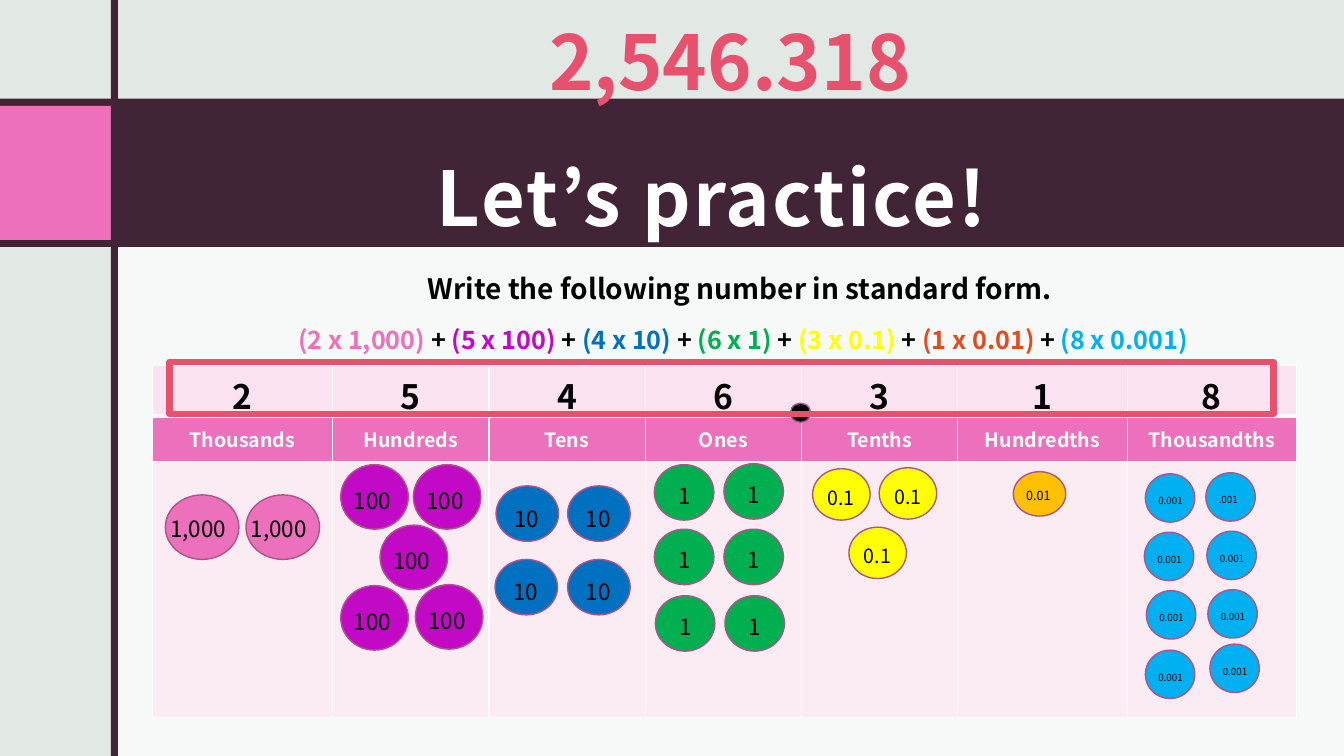
from dataclasses import dataclass

import lxml.etree
import pptx
import pptx.dml.color
import pptx.enum.shapes
import pptx.enum.text
import pptx.oxml.ns
import pptx.util

Inches = pptx.util.Inches
Pt = pptx.util.Pt
SHAPE = pptx.enum.shapes.MSO_SHAPE
ALIGN = pptx.enum.text.PP_ALIGN
ANCHOR = pptx.enum.text.MSO_ANCHOR
FIT = pptx.enum.text.MSO_AUTO_SIZE
qn = pptx.oxml.ns.qn


@dataclass(frozen=True)
class Theme:
    font: str = "Noto Sans CJK JP"
    backdrop: str = "E2E8E4"
    plum: str = "412436"
    pink: str = "EC70BB"
    coral: str = "E8516D"
    rim: str = "AF538A"
    digit_row: str = "FBE2F1"
    counter_row: str = "FBEBF3"
    white: str = "FFFFFF"
    black: str = "000000"
    purple: str = "C20AC6"
    blue: str = "0070C0"
    green: str = "00B050"
    yellow: str = "FFFF00"
    amber: str = "FFC000"
    orange: str = "E14C1F"
    sky: str = "00B0F0"
    headline: int = 54
    digit: int = 24
    task: int = 20
    sum: int = 18
    place: int = 14


def rgb(color):
    return pptx.dml.color.RGBColor.from_string(color)


class PracticeSlide:
    def __init__(self, deck, theme):
        self.theme = theme
        self.slide = deck.slides.add_slide(deck.slide_layouts[5])
        self.shapes = self.slide.shapes
        fill = self.slide.background.fill
        fill.solid()
        fill.fore_color.rgb = rgb(theme.backdrop)

    def style(self, font, size, color, bold=False):
        font.name, font.size, font.bold = self.theme.font, Pt(size), bold
        font.color.rgb = rgb(color)

    def shape(self, kind, box, fill=None, line=None, line_width=1, opacity=None, parent=None):
        shape = (parent or self.shapes).add_shape(kind, *map(Inches, box))
        shape.shadow.inherit = False
        if fill:
            shape.fill.solid()
            shape.fill.fore_color.rgb = rgb(fill)
        else:
            shape.fill.background()
        if line:
            shape.line.color.rgb = rgb(line)
            shape.line.width = Pt(line_width)
        else:
            shape.line.fill.background()
        if opacity:
            color = next(shape.element.spPr.iter(qn("a:srgbClr")))
            lxml.etree.SubElement(color, qn("a:alpha"), val=str(opacity * 1000))

    def text(self, box, words, size, color, bold=False, align=ALIGN.LEFT, parent=None):
        frame = (parent or self.shapes).add_textbox(*map(Inches, box)).text_frame
        frame.word_wrap = True
        frame.auto_size = FIT.SHAPE_TO_FIT_TEXT
        line = frame.paragraphs[0]
        line.text, line.alignment = words, align
        self.style(line.font, size, color, bold)
        return frame

    def title(self, box, words):
        title = self.shapes.title
        self.shapes.element.append(title.element)  # bring above the band
        title.left, title.top, title.width, title.height = map(Inches, box)
        frame = title.text_frame
        frame.auto_size, frame.word_wrap = FIT.NONE, True
        frame.vertical_anchor = ANCHOR.MIDDLE
        frame.margin_left = frame.margin_right = frame.margin_top = Inches(0.12)
        frame.margin_bottom = Inches(0.1)
        line = frame.paragraphs[0]
        line.text, line.alignment, line.line_spacing = words, ALIGN.CENTER, 1.5
        self.style(line.font, self.theme.headline, self.theme.white, True)
        line.runs[0].font._element.set("spc", "150")

    def cell(self, cell, words, size, color, fill, bottom):
        properties = cell._tc.get_or_add_tcPr()
        for side, width in (("L", 1), ("R", 1), ("T", 1), ("B", bottom)):
            border = lxml.etree.SubElement(properties, qn("a:ln" + side), w=str(Pt(width)))
            solid = lxml.etree.SubElement(border, qn("a:solidFill"))
            lxml.etree.SubElement(solid, qn("a:srgbClr"), val=self.theme.white)
        cell.fill.solid()
        cell.fill.fore_color.rgb = rgb(fill)
        cell.vertical_anchor = ANCHOR.MIDDLE
        line = cell.text_frame.paragraphs[0]
        line.text, line.alignment = words, ALIGN.CENTER
        self.style(line.font, size, color, True)

    def table(self, box, widths, rows):
        table = self.shapes.add_table(len(rows), len(widths), *map(Inches, box)).table
        for column, width in zip(table.columns, widths):
            column.width = Inches(width)
        for row, (height, words, *look) in zip(table.rows, rows):
            row.height = Inches(height)
            for cell, word in zip(row.cells, words):
                self.cell(cell, word, *look)

    def counter(self, left, top, size, color, label, label_size, offset, label_box):
        group = self.shapes.add_group_shape().shapes
        self.shape(SHAPE.OVAL, (left, top, *size), color, self.theme.rim, parent=group)
        box = (left + offset[0], top + offset[1], *label_box)
        self.text(box, label, label_size, self.theme.black, parent=group)


def main():
    theme = Theme()
    deck = pptx.Presentation()
    deck.slide_width, deck.slide_height = Inches(13.33), Inches(7.5)
    page = PracticeSlide(deck, theme)

    # Backdrop panels and title band
    page.shape(SHAPE.RECTANGLE, (1.14, 2.33, 12.2, 5.17), theme.white, opacity=75)
    page.shape(SHAPE.RECTANGLE, (0, 0.98, 13.33, 1.47), theme.plum)
    page.title((1.68, 0.98, 10.95, 1.47), "Let’s practice! ")
    page.shape(SHAPE.RECTANGLE, (0, 1.05, 1.1, 1.33), theme.pink)
    page.shape(SHAPE.RECTANGLE, (1.1, 0, 0.07, 7.5), theme.plum)

    # Task and expanded form
    task = page.text((1.51, 2.64, 11.72, 0.94), "Write the following number in standard form. ",
                     theme.task, theme.black, True, ALIGN.CENTER)
    expanded = task.add_paragraph()
    expanded.alignment, expanded.space_before = ALIGN.CENTER, Pt(14)
    terms = [("(2 x 1,000)", theme.pink), ("(5 x 100)", theme.purple), ("(4 x 10)", theme.blue),
             ("(6 x 1)", theme.green), ("(3 x 0.1)", theme.yellow), ("(1 x 0.01)", theme.orange),
             ("(8 x 0.001)", theme.sky)]
    for index, (term, color) in enumerate(terms):
        pieces = [(" + ", theme.black)] if index else []
        for words, tint in pieces + [(term, color)]:
            run = expanded.add_run()
            run.text = words
            page.style(run.font, theme.sum, tint, True)

    # Place value chart
    places = ["Thousands", "Hundreds", "Tens", "Ones", "Tenths", "Hundredths", "Thousandths"]
    page.table((1.51, 3.63, 11.36, 3.49), [1.79] + [1.55] * 4 + [1.68] * 2, [
        (0.5, "2546318", theme.digit, theme.black, theme.digit_row, 3),
        (0.45, places, theme.place, theme.white, theme.pink, 1),
        (2.54, [""] * len(places), theme.place, theme.black, theme.counter_row, 1),
    ])

    # Counters: label, type size, colour, disc size, label offset, label box, disc corners
    counters = [
        ("1,000", 16, theme.pink, (0.73, 0.64), (-0.05, 0.15), (0.96, 0.37),
         [(2.44, 4.91), (1.64, 4.91)]),
        ("100", 16, theme.purple, (0.67, 0.64), (0.03, 0.17), (0.64, 0.37),
         [(4.12, 5.8), (3.38, 5.81), (3.77, 5.21), (4.1, 4.61), (3.38, 4.61)]),
        ("10", 16, theme.blue, (0.62, 0.55), (0.08, 0.14), (0.59, 0.33),
         [(4.92, 4.82), (5.63, 4.82), (5.63, 5.55), (4.91, 5.55)]),
        ("1", 16, theme.green, (0.59, 0.55), (0.14, 0.12), (0.56, 0.37),
         [(7.19, 5.91), (6.5, 5.91), (7.18, 5.25), (6.49, 5.25), (7.18, 4.6), (6.49, 4.61)]),
        ("0.1", 14, theme.yellow, (0.57, 0.51), (0.05, 0.12), (0.54, 0.34),
         [(8.06, 4.65), (8.72, 4.64), (8.42, 5.23)]),
        ("0.01", 9, theme.amber, (0.52, 0.44), (0.03, 0.11), (0.5, 0.25), [(10.05, 4.68)]),
        ("0.001", 7, theme.sky, (0.49, 0.48), (0.03, 0.16), (0.5, 0.22),
         [(12, 6.39), (11.36, 4.7), (11.35, 5.28), (11.97, 5.27), (11.98, 5.85),
          (11.37, 5.86), (11.36, 6.45)]),
        (".001", 7, theme.sky, (0.49, 0.48), (0.03, 0.16), (0.5, 0.22), [(11.96, 4.69)]),
    ]
    for label, label_size, color, size, offset, label_box, corners in counters:
        for left, top in corners:
            page.counter(left, top, size, color, label, label_size, offset, label_box)

    # Decimal point, answer frame and answer
    page.shape(SHAPE.OVAL, (7.84, 4, 0.2, 0.19), theme.black, theme.rim)
    page.shape(SHAPE.RECTANGLE, (1.68, 3.59, 10.95, 0.52), line=theme.coral, line_width=4.5)
    page.text((3.91, 0.1, 6.66, 1.01), "2,546.318", theme.headline, theme.coral, True, ALIGN.CENTER)

    deck.save("out.pptx")


if __name__ == "__main__":
    main()
